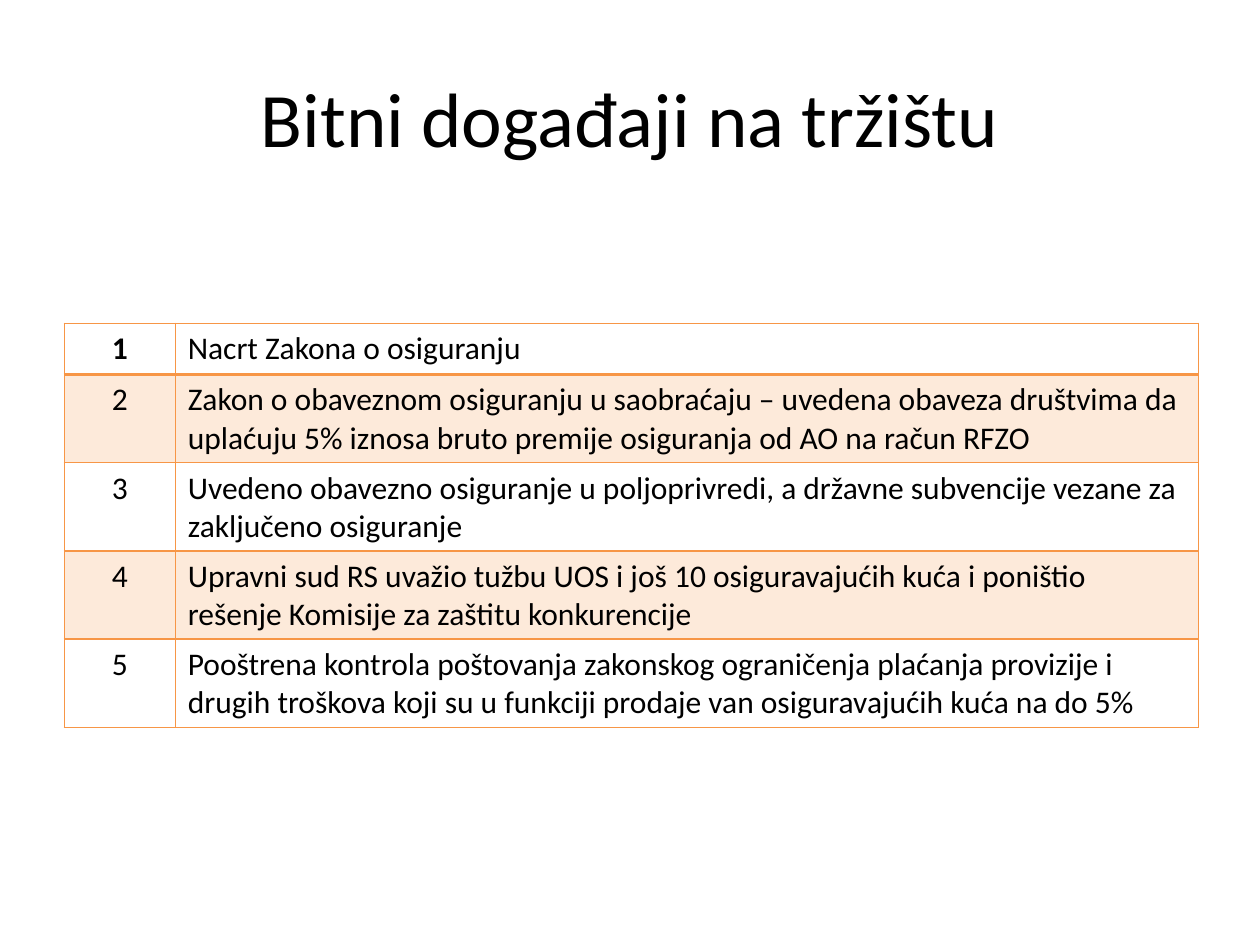
import dataclasses

import lxml.etree
import pptx
import pptx.dml.color
import pptx.enum.text
import pptx.oxml
import pptx.oxml.ns
import pptx.slide
import pptx.table
import pptx.text.text
import pptx.util

Pt = pptx.util.Pt
qn = pptx.oxml.ns.qn
ALIGN = pptx.enum.text.PP_ALIGN
COLORS = {"text": "000000", "accent": "F79646"}
FONT = "Calibri"
COLUMN_WIDTHS = (63.36, 584.64)
ROW_HEIGHT = 29.2


@dataclasses.dataclass(frozen=True)
class Event:
    """One numbered market event."""

    number: int
    wording: str


EVENTS = (
    Event(1, "Nacrt Zakona o osiguranju"),
    Event(2, "Zakon o obaveznom osiguranju u saobraćaju – uvedena obaveza društvima da "
             "uplaćuju 5% iznosa bruto premije osiguranja od AO na račun RFZO"),
    Event(3, "Uvedeno obavezno osiguranje u poljoprivredi, a državne subvencije vezane za "
             "zaključeno osiguranje"),
    Event(4, "Upravni sud RS uvažio tužbu UOS i još 10 osiguravajućih kuća i poništio "
             "rešenje Komisije za zaštitu konkurencije"),
    Event(5, "Pooštrena kontrola poštovanja zakonskog ograničenja plaćanja provizije i "
             "drugih troškova koji su u funkciji prodaje van osiguravajućih kuća na do 5%"),
)


def write(frame: pptx.text.text.TextFrame, wording: str, size: float,
          align: ALIGN, bold: bool = False) -> None:
    paragraph = frame.paragraphs[0]
    paragraph.alignment = align
    run = paragraph.add_run()
    run.text = wording
    run.font.name = FONT
    run.font.size = Pt(size)
    run.font.bold = bold
    run.font.color.rgb = pptx.dml.color.RGBColor.from_string(COLORS["text"])


def draw_borders(cell: pptx.table._Cell, widths: dict[str, float]) -> None:
    properties = cell._tc.get_or_add_tcPr()
    for side, width in widths.items():
        line = lxml.etree.SubElement(properties, qn(f"a:ln{side}"), w=str(Pt(width)))
        fill = lxml.etree.SubElement(line, qn("a:solidFill"))
        lxml.etree.SubElement(fill, qn("a:srgbClr"), val=COLORS["accent"])


def fill_cell(cell: pptx.table._Cell, shaded: bool) -> None:
    if not shaded:
        cell.fill.background()
        return
    cell.fill.solid()
    cell.fill.fore_color.rgb = pptx.dml.color.RGBColor.from_string(COLORS["accent"])
    color = cell._tc.tcPr.find(f"{qn('a:solidFill')}/{qn('a:srgbClr')}")
    lxml.etree.SubElement(color, qn("a:alpha"), val="20000")


def draw_title(slide: pptx.slide.Slide, wording: str) -> None:
    title = slide.shapes.add_textbox(Pt(36), Pt(21.6), Pt(648), Pt(90)).text_frame
    title.word_wrap = True
    title.vertical_anchor = pptx.enum.text.MSO_ANCHOR.MIDDLE
    write(title, wording, 44, ALIGN.CENTER)


def draw_events(slide: pptx.slide.Slide, events: tuple[Event, ...]) -> None:
    table = slide.shapes.add_table(
        len(events), len(COLUMN_WIDTHS), Pt(36.8), Pt(184.8),
        Pt(sum(COLUMN_WIDTHS)), Pt(ROW_HEIGHT * len(events))).table
    for column, width in zip(table.columns, COLUMN_WIDTHS):
        column.width = Pt(width)
    for index, event in enumerate(events):
        table.rows[index].height = Pt(ROW_HEIGHT)
        number, description = table.rows[index].cells
        write(number.text_frame, str(event.number), 18, ALIGN.CENTER, bold=index == 0)
        write(description.text_frame, event.wording, 18, ALIGN.LEFT)
        widths = {"L": 1, "R": 1, "T": 2 if index == 1 else 1, "B": 2 if index == 0 else 1}
        for cell in (number, description):
            draw_borders(cell, widths)
            fill_cell(cell, shaded=index % 2 == 1)


def main() -> None:
    deck = pptx.Presentation()
    deck.slide_width, deck.slide_height = Pt(720), Pt(540)
    slide = deck.slides.add_slide(deck.slide_layouts[6])
    draw_title(slide, "Bitni događaji na tržištu")
    draw_events(slide, EVENTS)
    deck.save("out.pptx")


if __name__ == "__main__":
    main()
